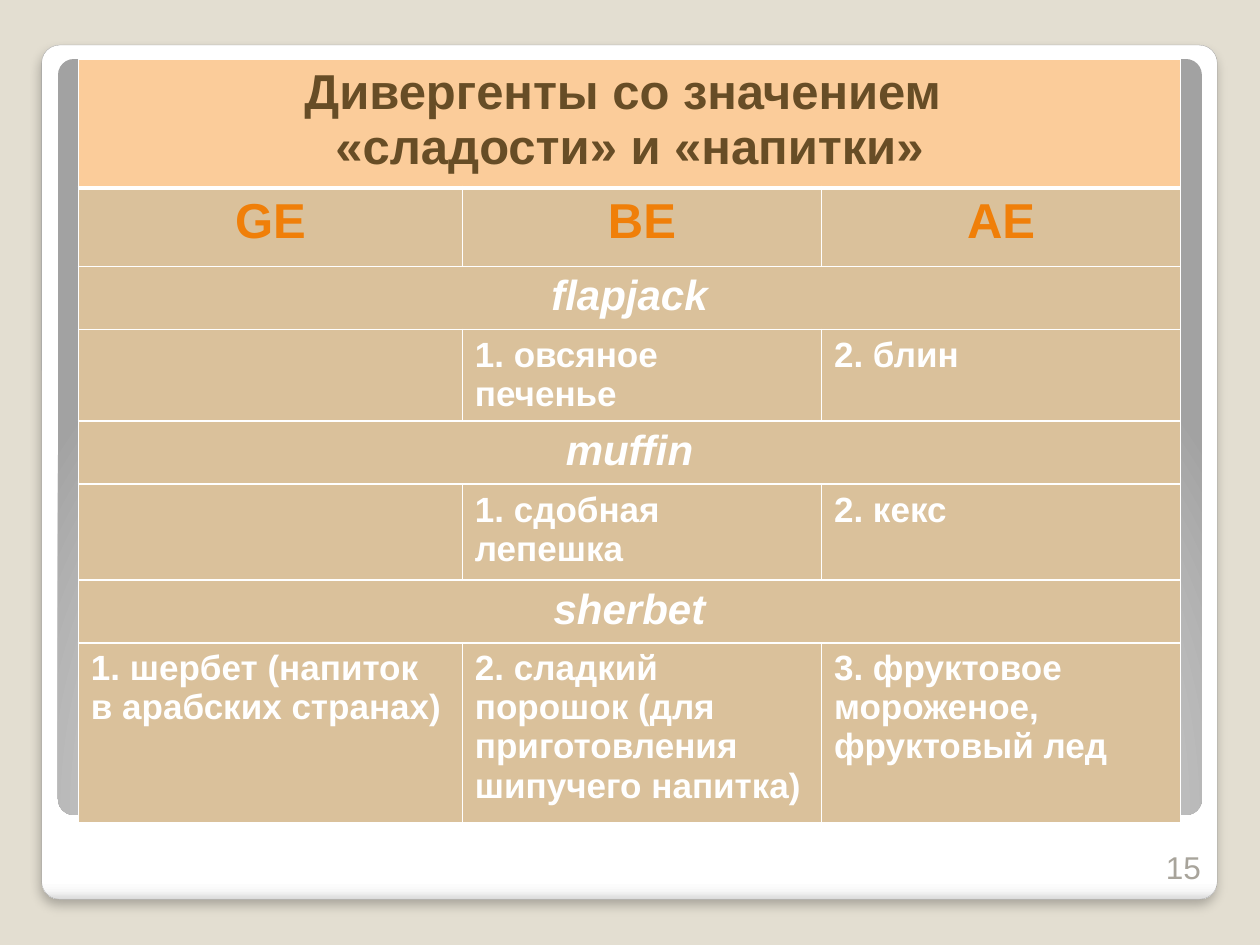
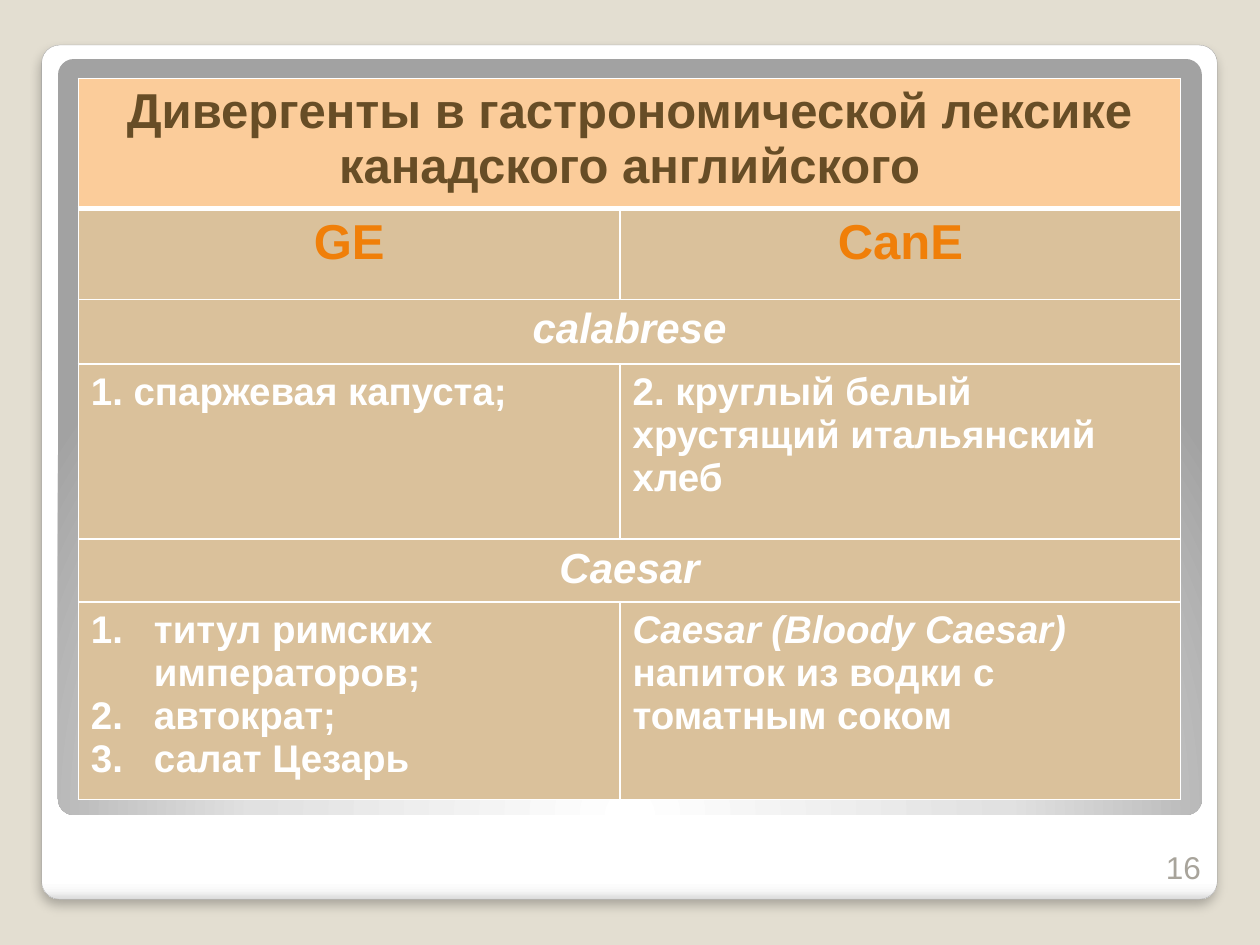
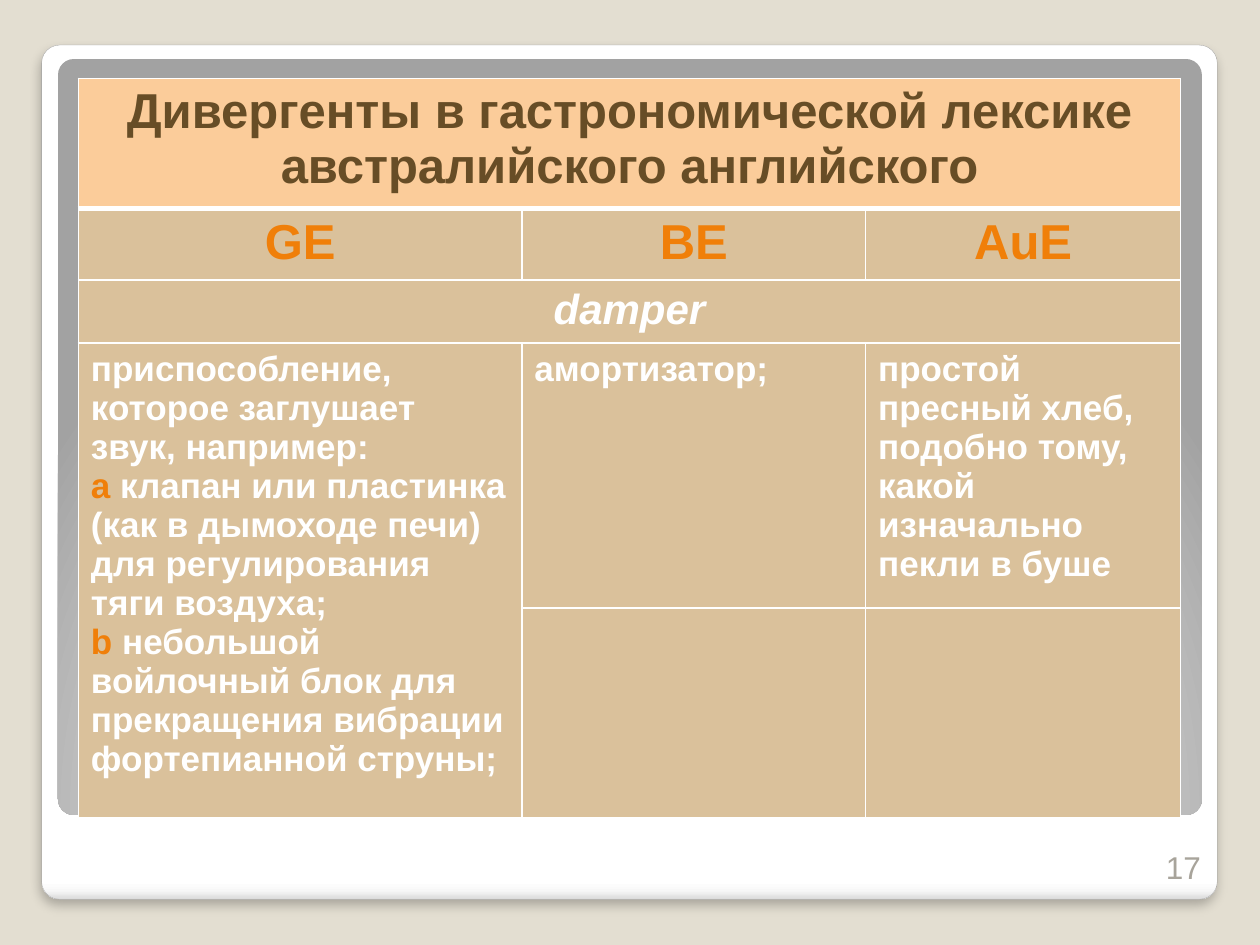
"""Three slides of tables on divergent food vocabulary in varieties of English."""
from dataclasses import dataclass

from lxml.etree import SubElement
from pptx import Presentation
from pptx.dml.color import RGBColor
from pptx.enum.shapes import MSO_SHAPE
from pptx.enum.text import MSO_ANCHOR, PP_ALIGN
from pptx.oxml import parse_xml
from pptx.oxml.ns import nsdecls, qn
from pptx.util import Cm, Pt

COLORS = {
    "background": "E3DED1",
    "panel_edge": "A4A4A4",
    "title_fill": "FBCC9A",
    "cell_fill": "DAC19B",
    "title": "674D26",
    "accent": "F07F09",
    "white": "FFFFFF",
    "shadow": "000000",
    "number": "A8A49B",
}
FONT = "Arial"
SLIDE_SIZE = (25.4, 19.05)
PANEL_BOX = (0.84, 0.91, 23.7, 17.22)
FRAME_BOX = (1.17, 1.19, 23.06, 15.24)
NUMBER_BOX = (23.19, 16.97, 1.27, 1.02)
TABLE_LEFT = 1.58
CORNER = 0.021
PANEL_STOPS = [(0, "FFFFFF"), (98, "FFFFFF"), (99, "F7F7F7"), (100, "DADADA")]
FRAME_STOPS = [(0, "FFFFFF"), (55, "E1E1E1"), (100, "A2A2A2")]
LINEAR_DOWN = '<a:lin ang="5400000" scaled="0"/>'
CIRCLE_FROM_BOTTOM = (
    '<a:path path="circle">'
    '<a:fillToRect l="50000" t="175000" r="50000" b="-75000"/></a:path>'
)
ROW_STYLES = {
    "title": (28, "title", "title_fill", PP_ALIGN.CENTER, False),
    "varieties": (28, "accent", "cell_fill", PP_ALIGN.CENTER, False),
    "word": (24, "white", "cell_fill", PP_ALIGN.CENTER, True),
    "meanings": (20, "white", "cell_fill", PP_ALIGN.LEFT, False),
    "large meanings": (22, "white", "cell_fill", PP_ALIGN.LEFT, False),
}


@dataclass
class Line:
    """One paragraph of a cell with its optional emphasis."""

    text: str
    marker: str = ""
    italic: bool = False
    numbered: bool = False


@dataclass
class Row:
    """One table row; a single cell spans the table, None continues the cell above."""

    kind: str
    height: float
    cells: list


def rgb(name):
    """Return the named colour."""
    return RGBColor.from_string(COLORS[name])


def set_font(font, size, color, bold=False, italic=False):
    """Set the shared typeface with the given size and colour."""
    font.name, font.size = FONT, Pt(size)
    font.bold, font.italic = bold, italic
    font.color.rgb = rgb(color)


def add_gradient_box(slide, box, stops, direction):
    """Add a rounded rectangle with a gradient and no outline."""
    shape = slide.shapes.add_shape(MSO_SHAPE.ROUNDED_RECTANGLE, *map(Cm, box))
    shape.adjustments[0] = CORNER
    shape.shadow.inherit = False
    shape.line.fill.background()
    stop_list = "".join(
        f'<a:gs pos="{position * 1000}"><a:srgbClr val="{color}"/></a:gs>'
        for position, color in stops
    )
    gradient = parse_xml(
        f'<a:gradFill {nsdecls("a")} rotWithShape="1">'
        f"<a:gsLst>{stop_list}</a:gsLst>{direction}</a:gradFill>"
    )
    shape._element.spPr.find(qn("a:prstGeom")).addnext(gradient)
    return shape


def add_backdrop(slide):
    """Draw the background, the white panel and the grey frame."""
    slide.background.fill.solid()
    slide.background.fill.fore_color.rgb = rgb("background")
    panel = add_gradient_box(slide, PANEL_BOX, PANEL_STOPS, LINEAR_DOWN)
    panel.line.color.rgb = rgb("panel_edge")
    panel.line.width = Pt(0.16)
    effects = panel._element.spPr.find(qn("a:effectLst"))
    shadow = SubElement(
        effects, qn("a:outerShdw"), blurRad=str(Pt(6)), dist=str(Pt(4)),
        dir="5400000", algn="t", rotWithShape="0",
    )
    shadow_color = SubElement(shadow, qn("a:srgbClr"), val=COLORS["shadow"])
    SubElement(shadow_color, qn("a:alpha"), val="25000")
    add_gradient_box(slide, FRAME_BOX, FRAME_STOPS, CIRCLE_FROM_BOTTOM)


def add_slide_number(slide, number, box):
    """Write the slide number at the bottom right of its box."""
    frame = slide.shapes.add_textbox(*map(Cm, box)).text_frame
    frame.word_wrap = True
    frame.vertical_anchor = MSO_ANCHOR.BOTTOM
    paragraph = frame.paragraphs[0]
    paragraph.text = str(number)
    paragraph.alignment = PP_ALIGN.RIGHT
    set_font(paragraph.font, 18, "number")


def set_borders(cell, top, bottom):
    """Give a cell white borders, with its own top and bottom widths."""
    properties = cell._tc.get_or_add_tcPr()
    widths = {"lnL": 1, "lnR": 1, "lnT": top, "lnB": bottom}
    for index, (side, width) in enumerate(widths.items()):
        border = parse_xml(
            f'<a:{side} {nsdecls("a")} w="{Pt(width)}"><a:solidFill>'
            f'<a:srgbClr val="{COLORS["white"]}"/></a:solidFill></a:{side}>'
        )
        properties.insert(index, border)


def write_cell(cell, content, kind):
    """Write a string or a list of lines in the style of the row."""
    size, color, _, alignment, italic = ROW_STYLES[kind]
    lines = content if isinstance(content, list) else [content]
    for index, line in enumerate(lines):
        line = line if isinstance(line, Line) else Line(line)
        frame = cell.text_frame
        paragraph = frame.add_paragraph() if index else frame.paragraphs[0]
        paragraph.alignment = alignment
        set_font(paragraph.font, size, color, True, italic or line.italic)
        if line.marker:
            marker = paragraph.add_run()
            marker.text = line.marker
            marker.font.color.rgb = rgb("accent")
        paragraph.add_run().text = line.text
        if line.numbered:
            properties = paragraph._p.get_or_add_pPr()
            properties.set("marL", str(Cm(1.27)))
            properties.set("indent", str(-Cm(1.27)))
            numbering = parse_xml(
                f'<a:buAutoNum {nsdecls("a")} type="arabicPeriod"/>'
            )
            properties.insert(0, numbering)


def add_vocabulary_table(slide, top, widths, rows):
    """Add the table of words and meanings at the given height."""
    table = slide.shapes.add_table(
        len(rows), len(widths), Cm(TABLE_LEFT), Cm(top),
        Cm(sum(widths)), Cm(sum(row.height for row in rows)),
    ).table
    table.first_row = table.horz_banding = False
    for column, width in zip(table.columns, widths):
        column.width = Cm(width)
    for row_index, row in enumerate(rows):
        table.rows[row_index].height = Cm(row.height)
        for column_index in range(len(widths)):
            cell = table.cell(row_index, column_index)
            cell.fill.solid()
            cell.fill.fore_color.rgb = rgb(ROW_STYLES[row.kind][2])
            set_borders(cell, 3 if row_index == 1 else 1, 3 if row_index == 0 else 1)
        if len(row.cells) == 1:
            table.cell(row_index, 0).merge(table.cell(row_index, len(widths) - 1))
        for column_index, content in enumerate(row.cells):
            cell = table.cell(row_index, column_index)
            if content is None:
                table.cell(row_index - 1, column_index).merge(cell)
            elif content:
                write_cell(cell, content, row.kind)


def add_vocabulary_slide(presentation, number, top, widths, rows):
    """Add one complete slide."""
    slide = presentation.slides.add_slide(presentation.slide_layouts[6])
    add_backdrop(slide)
    add_vocabulary_table(slide, top, widths, rows)
    add_slide_number(slide, number, NUMBER_BOX)


SWEETS_AND_DRINKS = [
    Row("title", 2.6, [["Дивергенты со значением ", "«сладости» и «напитки»"]]),
    Row("varieties", 1.58, ["GE", "ВЕ", "АЕ"]),
    Row("word", 1.27, ["flapjack"]),
    Row("meanings", 1.85, ["", "1. овсяное печенье", "2. блин"]),
    Row("word", 1.27, ["muffin"]),
    Row("meanings", 1.93, ["", "1. сдобная лепешка", "2. кекс"]),
    Row("word", 1.27, ["sherbet"]),
    Row("meanings", 3.62, [
        "1. шербет (напиток в арабских странах)",
        "2. сладкий порошок (для приготовления шипучего напитка)",
        "3. фруктовое мороженое, фруктовый лед",
    ]),
]
CANADIAN = [
    Row("title", 2.58, ["Дивергенты в гастрономической лексике канадского английского"]),
    Row("varieties", 1.83, ["GE", "CanE"]),
    Row("word", 1.3, ["calabrese"]),
    Row("large meanings", 3.53, [
        "1. спаржевая капуста;",
        "2. круглый белый хрустящий итальянский хлеб",
    ]),
    Row("word", 1.24, ["Caesar"]),
    Row("large meanings", 3.73, [
        [
            Line("титул римских императоров;", numbered=True),
            Line("автократ;", numbered=True),
            Line("салат Цезарь", numbered=True),
        ],
        [
            Line("Caesar (Bloody Caesar)", italic=True),
            "напиток из водки с томатным соком",
        ],
    ]),
]
AUSTRALIAN = [
    Row("title", 2.44, ["Дивергенты в гастрономической лексике австралийского английского"]),
    Row("varieties", 1.37, ["GE", "ВЕ", "АuЕ"]),
    Row("word", 1.19, ["damper"]),
    Row("meanings", 4.98, [
        [
            "приспособление, которое заглушает звук, например:",
            Line(
                " клапан или пластинка (как в дымоходе печи) "
                "для регулирования тяги воздуха;",
                marker="а",
            ),
            Line(
                " небольшой войлочный блок для прекращения вибрации "
                "фортепианной струны;",
                marker="b",
            ),
        ],
        "амортизатор;",
        "простой пресный хлеб, подобно тому, какой изначально пекли в буше",
    ]),
    Row("meanings", 3.93, [None, "", ""]),
]


def main():
    """Build and save the presentation."""
    presentation = Presentation()
    presentation.slide_width, presentation.slide_height = map(Cm, SLIDE_SIZE)
    add_vocabulary_slide(presentation, 15, 1.19, (7.74, 7.24, 7.24), SWEETS_AND_DRINKS)
    add_vocabulary_slide(presentation, 16, 1.58, (10.92, 11.3), CANADIAN)
    add_vocabulary_slide(presentation, 17, 1.58, (8.94, 6.93, 6.35), AUSTRALIAN)
    presentation.save("out.pptx")


if __name__ == "__main__":
    main()
